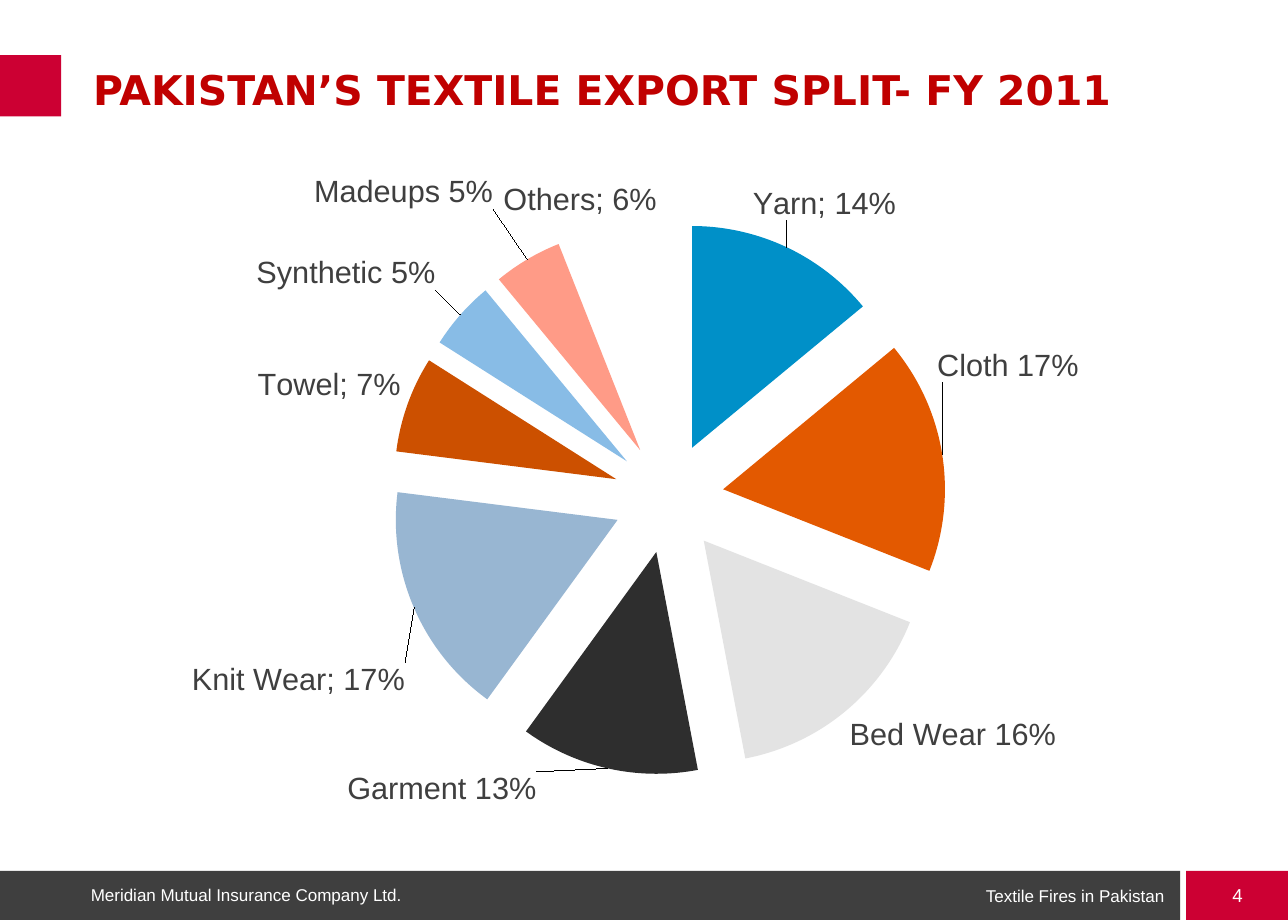
from dataclasses import dataclass

from lxml.etree import SubElement
from pptx import Presentation
from pptx.chart.data import CategoryChartData
from pptx.dml.color import RGBColor
from pptx.enum.chart import XL_CHART_TYPE, XL_LABEL_POSITION
from pptx.enum.shapes import MSO_SHAPE
from pptx.enum.text import MSO_ANCHOR, PP_ALIGN
from pptx.oxml import parse_xml
from pptx.oxml.ns import nsdecls, qn
from pptx.util import Inches, Pt


@dataclass(frozen=True)
class Theme:
    accent: str = "CC0033"
    title: str = "C00000"
    dark: str = "3F3F3F"
    light: str = "FFFFFF"
    body_font: str = "Arial"
    title_font: str = "DejaVu Sans"
    title_size: int = 24
    label_size: int = 18
    number_size: int = 11
    footer_size: int = 10


THEME = Theme()
CHART_WIDTH, CHART_HEIGHT = 9.08, 5.42
PIE_LEFT, PIE_TOP, PIE_SIZE = 2.49, 0.45, 4.52


@dataclass(frozen=True)
class Slice:
    """One export; offset moves its label right and down, in inches."""
    name: str
    share: float
    color: str
    offset: tuple = None
    label: str = None


EXPORTS = [
    Slice("Yarn", 0.14, "0090C8", (-0.3, -0.16)),
    Slice("Cloth", 0.17, "E35900", (-0.1, -0.58), "Cloth 17%"),
    Slice("Bedwear", 0.16, "E3E3E3", (0, 0), "Bed Wear 16%"),
    Slice("Garment", 0.13, "2E2E2E", (-0.57, -0.03), "Garment 13%"),
    Slice("Knit Wear", 0.17, "98B6D2", (-0.02, 0.42)),
    Slice("Towel", 0.07, "CC5000"),
    Slice("Synthetic", 0.05, "88BCE6", (-0.16, -0.16), "Synthetic 5%"),
    Slice("Madeups", 0.05, "FF9B87", (-0.25, -0.36), "Madeups 5%"),
    Slice("Others", 0.06, "FFFFFF", (0.34, -0.01)),
]


def add_block(slide, left, top, width, height, color):
    shape = slide.shapes.add_shape(
        MSO_SHAPE.RECTANGLE, Inches(left), Inches(top), Inches(width), Inches(height))
    shape.shadow.inherit = False
    shape.fill.solid()
    shape.fill.fore_color.rgb = RGBColor.from_string(color)
    shape.line.fill.background()


def set_font(font, size, color, name=THEME.body_font, bold=False):
    font.name = name
    font.size = Pt(size)
    font.bold = bold
    font.color.rgb = RGBColor.from_string(color)


def add_text(slide, text, left, top, width, height, *, align=PP_ALIGN.LEFT,
             spacing=1.0, **font_format):
    box = slide.shapes.add_textbox(
        Inches(left), Inches(top), Inches(width), Inches(height))
    frame = box.text_frame
    frame.word_wrap = True
    frame.vertical_anchor = MSO_ANCHOR.MIDDLE
    frame.margin_left = frame.margin_right = 0
    frame.margin_top = frame.margin_bottom = 0
    paragraph = frame.paragraphs[0]
    paragraph.alignment = align
    paragraph.line_spacing = spacing
    run = paragraph.add_run()
    run.text = text
    set_font(run.font, **font_format)


def manual_layout(**values):
    """Return a chart layout element holding the given settings in order."""
    layout = parse_xml(f"<c:layout {nsdecls('c')}><c:manualLayout/></c:layout>")
    for name, value in values.items():
        SubElement(layout[0], qn(f"c:{name}"), val=str(value))
    return layout


def add_separator(labels):
    separator = parse_xml(f"<c:separator {nsdecls('c')}>; </c:separator>")
    labels.find(qn("c:showBubbleSize")).addnext(separator)


def format_series_labels(labels):
    labels.show_value = True
    labels.show_category_name = True
    labels.show_percentage = False
    labels.number_format = "0%"
    labels.number_format_is_linked = False
    labels.position = XL_LABEL_POSITION.OUTSIDE_END
    set_font(labels.font, THEME.label_size, THEME.dark)
    add_separator(labels._element)


def format_slice_label(series, index, export):
    """Place one label, with its own wording where the slice has one."""
    label = series.points[index].data_label
    if export.label:
        paragraph = label.text_frame.paragraphs[0]
        run = paragraph.add_run()
        run.text = export.label
        set_font(run.font, THEME.label_size, THEME.dark)
    else:
        set_font(label.font, THEME.label_size, THEME.dark)
    label.position = XL_LABEL_POSITION.OUTSIDE_END

    element = next(item for item in series._element.iter(qn("c:dLbl"))
                   if item.find(qn("c:idx")).get("val") == str(index))
    right, down = export.offset
    element.find(qn("c:idx")).addnext(
        manual_layout(x=right / CHART_WIDTH, y=down / CHART_HEIGHT))
    element.find(qn("c:showCatName")).set("val", "1")
    if not export.label:
        number_format = parse_xml(
            f'<c:numFmt {nsdecls("c")} formatCode="0%" sourceLinked="0"/>')
        element.find(qn("c:txPr")).addprevious(number_format)
        add_separator(element)


def add_export_pie(slide, left, top):
    data = CategoryChartData(number_format="0%")
    data.categories = [export.name for export in EXPORTS]
    data.add_series("Series 1", [export.share for export in EXPORTS])
    chart = slide.shapes.add_chart(
        XL_CHART_TYPE.PIE, Inches(left), Inches(top),
        Inches(CHART_WIDTH), Inches(CHART_HEIGHT), data).chart
    chart.has_title = False
    chart.has_legend = False
    set_font(chart.font, THEME.label_size, THEME.dark)

    plot = chart.plots[0]
    plot.vary_by_categories = True
    series = plot.series[0]
    format_series_labels(series.data_labels)
    for index, export in enumerate(EXPORTS):
        point = series.points[index]
        point.format.fill.solid()
        point.format.fill.fore_color.rgb = RGBColor.from_string(export.color)
        point.format.line.fill.background()
        if export.offset:
            format_slice_label(series, index, export)

    explosion = parse_xml(f'<c:explosion {nsdecls("c")} val="25"/>')
    series._element.find(qn("c:dPt")).addprevious(explosion)

    plot_area = chart._chartSpace.find(f".//{qn('c:plotArea')}")
    for layout in plot_area.findall(qn("c:layout")):
        plot_area.remove(layout)
    plot_area.insert(0, manual_layout(
        layoutTarget="inner", xMode="edge", yMode="edge",
        x=PIE_LEFT / CHART_WIDTH, y=PIE_TOP / CHART_HEIGHT,
        w=PIE_SIZE / CHART_WIDTH, h=PIE_SIZE / CHART_HEIGHT))


def add_footer(slide):
    add_block(slide, 0, 7.1, 9.62, 0.42, THEME.dark)
    add_block(slide, 9.67, 7.1, 0.83, 0.42, THEME.accent)
    add_text(slide, "4", 9.68, 7.1, 0.82, 0.4, align=PP_ALIGN.CENTER,
             size=THEME.number_size, color=THEME.light)
    add_text(slide, "Meridian Mutual Insurance Company Ltd.", 0.74, 7.08, 4.19, 0.42,
             size=THEME.footer_size, color=THEME.light)
    add_text(slide, "Textile Fires in Pakistan", 5.3, 7.09, 4.19, 0.42,
             align=PP_ALIGN.RIGHT, size=THEME.footer_size, color=THEME.light)


def main():
    presentation = Presentation()
    presentation.slide_width = Inches(10.5)
    presentation.slide_height = Inches(7.5)
    slide = presentation.slides.add_slide(presentation.slide_layouts[6])
    add_footer(slide)
    add_block(slide, 0, 0.45, 0.5, 0.5, THEME.accent)
    add_text(slide, "PAKISTAN’S TEXTILE EXPORT SPLIT- FY 2011", 0.76, 0.46, 9.11, 0.47,
             spacing=1.15, size=THEME.title_size, color=THEME.title,
             name=THEME.title_font, bold=True)
    add_export_pie(slide, 0.7, 1.35)
    presentation.save("out.pptx")


if __name__ == "__main__":
    main()
